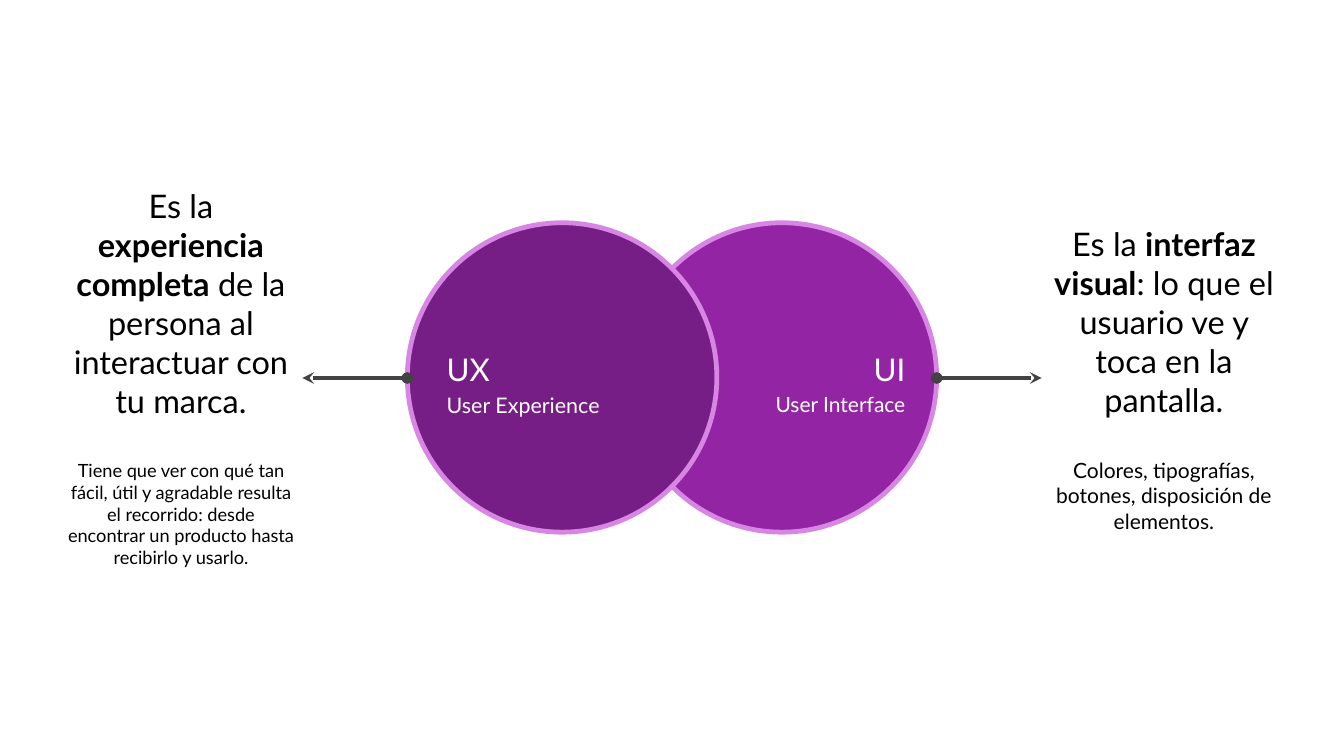
from lxml import etree
from pptx import Presentation
from pptx.dml.color import RGBColor
from pptx.enum.shapes import MSO_CONNECTOR, MSO_SHAPE
from pptx.enum.text import MSO_ANCHOR, PP_ALIGN
from pptx.oxml.ns import qn
from pptx.util import Inches, Pt

LEFT, CENTER, RIGHT = PP_ALIGN.LEFT, PP_ALIGN.CENTER, PP_ALIGN.RIGHT
MIDDLE = MSO_ANCHOR.MIDDLE
OVAL = MSO_SHAPE.OVAL
STRAIGHT = MSO_CONNECTOR.STRAIGHT

WHITE = RGBColor(0xFF, 0xFF, 0xFF)
BLACK = RGBColor(0x00, 0x00, 0x00)
UX_PURPLE = RGBColor(0x77, 0x1E, 0x86)
UI_PURPLE = RGBColor(0x93, 0x25, 0xA5)
RIM_LILAC = RGBColor(0xD7, 0x86, 0xE4)
ARROW_GREY = RGBColor(0x43, 0x43, 0x43)

WIDTH, HEIGHT = 13.33, 7.5
MIDLINE = HEIGHT / 2
DIAMETER = 3.07
CIRCLE_TOP = 2.21
UX_LEFT = 4.04
UI_LEFT = WIDTH - UX_LEFT - DIAMETER
ARROW_LENGTH = 1.04
TEXT_WIDTH = 2.43
LABEL_TOP, LABEL_HEIGHT = 3.35, 0.86
BLANK_LINE = 27.8

deck = Presentation()
deck.slide_width, deck.slide_height = Inches(WIDTH), Inches(HEIGHT)
page = deck.slides.add_slide(deck.slide_layouts[6])


def add_text(left, top, width, height, inset, color, align, paragraphs, spacing, gap):
    """Add a box of paragraphs, each a size and its (text, bold) runs; gap parts them."""
    box = page.shapes.add_textbox(Inches(left), Inches(top), Inches(width), Inches(height))
    frame = box.text_frame
    frame.word_wrap = True
    frame.vertical_anchor = MIDDLE
    frame.margin_left = frame.margin_right = Inches(inset)
    frame.margin_top = frame.margin_bottom = Inches(inset)
    for index, (size, spans) in enumerate(paragraphs):
        para = frame.add_paragraph() if index else frame.paragraphs[0]
        para.alignment = align
        para.line_spacing = spacing
        if index:
            para.space_before = Pt(gap)
        for text, bold in spans:
            span = para.add_run()
            span.text = text
            span.font.name = "Lato"
            span.font.size = Pt(size)
            span.font.bold = bold
            span.font.color.rgb = color


# Overlapping circles with their labels, UX in front
circles = [
    (UI_LEFT, UI_PURPLE, 7.35, 1.78, RIGHT, "UI", "User Interface", 15),
    (UX_LEFT, UX_PURPLE, 4.28, 2.1, LEFT, "UX", "User Experience", 15.3),
]
for left, fill, label_left, label_width, align, short, full, full_size in circles:
    circle = page.shapes.add_shape(
        OVAL, Inches(left), Inches(CIRCLE_TOP), Inches(DIAMETER), Inches(DIAMETER))
    circle.shadow.inherit = False
    circle.fill.solid()
    circle.fill.fore_color.rgb = fill
    circle.line.color.rgb = RIM_LILAC
    circle.line.width = Pt(3.41)
    add_text(label_left, LABEL_TOP, label_width, LABEL_HEIGHT, 0.15, WHITE, align,
             [(22.3, [(short, False)]), (full_size, [(full, False)])], 1.15, 0)

# Definitions on either side
definitions = [
    (0.58, 1.71, 4.07,
     [("Es la ", False), ("experiencia completa", True),
      (" de la persona al interactuar con tu marca.", False)],
     13, "Tiene que ver con qué tan fácil, útil y agradable resulta el recorrido: "
         "desde encontrar un producto hasta recibirlo y usarlo."),
    (10.33, 2.1, 3.31,
     [("Es la ", False), ("interfaz visual", True),
      (": lo que el usuario ve y toca en la pantalla.", False)],
     15, "Colores, tipografías, botones, disposición de elementos."),
]
for left, top, height, headline, detail_size, detail in definitions:
    add_text(left, top, TEXT_WIDTH, height, 0.09, BLACK, CENTER,
             [(23.2, headline), (detail_size, [(detail, False)])], 1.0, BLANK_LINE)

# Arrows from the outer rims to the definitions
for start, direction in ((UX_LEFT, -1), (UI_LEFT + DIAMETER, 1)):
    arrow = page.shapes.add_connector(
        STRAIGHT, Inches(start), Inches(MIDLINE),
        Inches(start + direction * ARROW_LENGTH), Inches(MIDLINE))
    arrow.line.color.rgb = ARROW_GREY
    arrow.line.width = Pt(2.79)
    properties = arrow.element.spPr
    outline = properties.find(qn("a:ln"))
    etree.SubElement(outline, qn("a:headEnd"), type="oval")
    etree.SubElement(outline, qn("a:tailEnd"), type="stealth")
    etree.SubElement(properties, qn("a:effectLst"))

deck.save("out.pptx")
